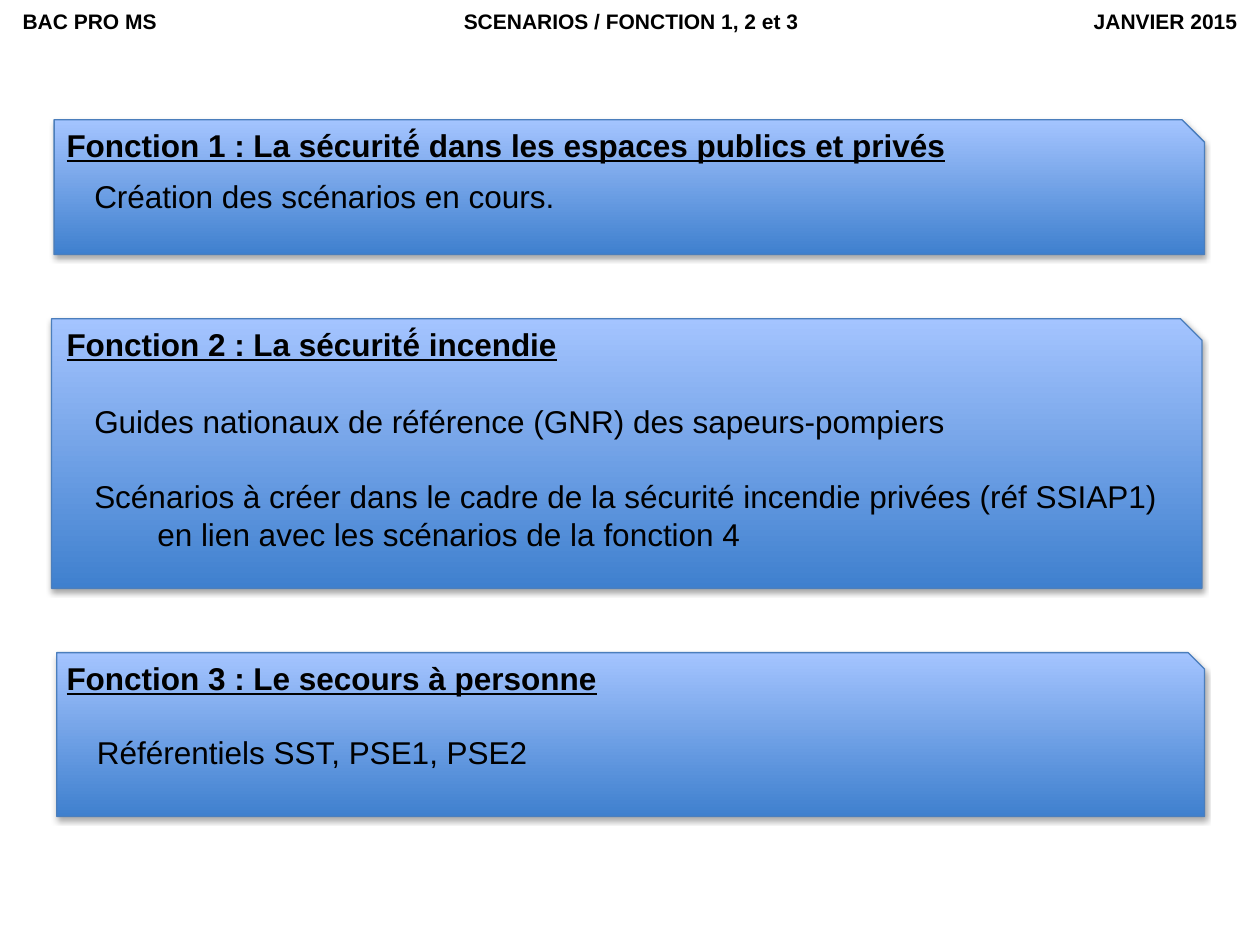
from lxml import etree
from pptx import Presentation
from pptx.dml.color import RGBColor
from pptx.enum import shapes, text
from pptx.oxml import ns
from pptx.util import Inches, Pt

INK = {"text": "000000", "low": "3F80CE", "high": "A4C4FF",
       "edge": "4B7EBC", "shade": "000000"}

# panel (at, snip), title (at, words), body (at, lines as (words, indent, gap))
CARDS = [
    ((0.43, 0.95, 9.13, 1.07), 0.167,
     (0.43, 0.95, 8.83, 0.35),
     "Fonction 1 : La sécurité́ dans les espaces publics et privés",
     (0.65, 1.36, 4.46, 0.4),
     [("Création des scénarios en cours.", 0, 0)]),
    ((0.45, 5.18, 9.11, 1.3), 0.1,
     (0.43, 5.18, 9.5, 0.4),
     "Fonction 3 : Le secours à personne",
     (0.67, 5.77, 8.48, 0.4),
     [("Référentiels SST, PSE1, PSE2", 0, 0)]),
    ((0.41, 2.53, 9.13, 2.14), 0.08,
     (0.43, 2.53, 8.83, 0.4),
     "Fonction 2 : La sécurité́ incendie",
     (0.65, 3.14, 8.77, 1.31),
     [("Guides nationaux de référence (GNR) des sapeurs-pompiers", 0, 0),
      ("Scénarios à créer dans le cadre de la sécurité incendie privées "
       "(réf SSIAP1)", 0, 21.6),
      ("en lien avec les scénarios de la fonction 4", 0.5, 0)]),
]


def color(name):
    return RGBColor.from_string(INK[name])


def inches(at):
    return [Inches(n) for n in at]


def add_text(host, at, lines, size=18, bold=False, under=False,
             inset=0.1, tabs=()):
    """Add a text box; lines hold (words, indent, space before)."""
    frame = host.shapes.add_textbox(*inches(at)).text_frame
    frame.word_wrap = True
    frame.margin_left = Inches(inset)
    for i, (words, indent, gap) in enumerate(lines):
        para = frame.add_paragraph() if i else frame.paragraphs[0]
        props = para._p.get_or_add_pPr()
        if indent:
            props.set("marL", str(Inches(indent)))
        if len(lines) > 1:
            para.line_spacing = Pt(21.6)
        if gap:
            para.space_before = Pt(gap)
        if tabs:
            stops = etree.SubElement(props, ns.qn("a:tabLst"))
            for pos, side in tabs:
                etree.SubElement(stops, ns.qn("a:tab"),
                                 pos=str(Inches(pos)), algn=side)
        run = para.add_run()
        run.text = words
        font = run.font
        font.name, font.size = "Arial", Pt(size)
        font.bold, font.underline = bold, under
        font.color.rgb = color("text")


def add_shade(shape):
    """Give the shape a soft shadow straight below it."""
    shape.shadow.inherit = False
    effects = shape._element.spPr.find(ns.qn("a:effectLst"))
    outer = etree.SubElement(effects, ns.qn("a:outerShdw"),
                             blurRad=str(Pt(3.1)), dist=str(Pt(1.8)),
                             dir="5400000", rotWithShape="0")
    tint = etree.SubElement(outer, ns.qn("a:srgbClr"), val=INK["shade"])
    etree.SubElement(tint, ns.qn("a:alpha"), val="35000")


def add_panel(host, at, snip):
    panel = host.shapes.add_shape(
        shapes.MSO_SHAPE.SNIP_1_RECTANGLE, *inches(at))
    panel.adjustments[0] = snip
    panel.fill.gradient()
    panel.fill.gradient_angle = 90
    for stop, name in zip(panel.fill.gradient_stops, ("low", "high")):
        stop.color.rgb = color(name)
    panel.line.color.rgb = color("edge")
    panel.line.width = Pt(0.75)
    add_shade(panel)


def add_card(slide, at, snip, head_at, head, body_at, body):
    group = slide.shapes.add_group_shape()
    add_panel(group, at, snip)
    add_text(group, head_at, [(head, 0, 0)], bold=True, under=True)
    add_text(group, body_at, body)


def main():
    deck = Presentation()
    deck.slide_width, deck.slide_height = Inches(10), Inches(7.5)
    slide = deck.slides.add_slide(deck.slide_layouts[6])
    head = "BAC PRO MS\tSCENARIOS / FONCTION 1, 2 et 3\tJANVIER 2015"
    add_text(slide, (0, 0.02, 10, 0.3), [(head, 0, 0)], size=12, bold=True,
             inset=0.18, tabs=((4.83, "ctr"), (9.64, "r")))
    for card in CARDS:
        add_card(slide, *card)
    deck.save("out.pptx")


if __name__ == "__main__":
    main()
